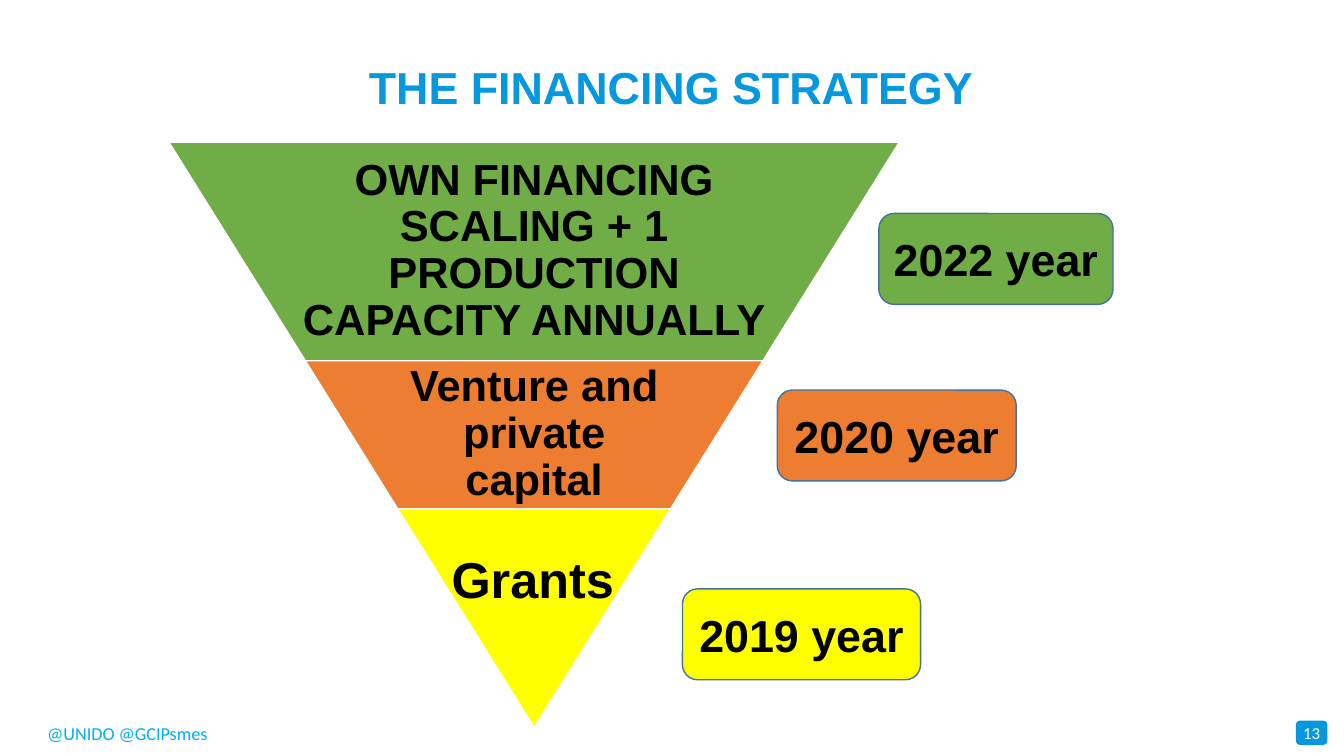
from dataclasses import dataclass

from pptx import Presentation
from pptx.dml.color import RGBColor
from pptx.enum.shapes import MSO_SHAPE as Preset
from pptx.enum.text import MSO_ANCHOR as Anchor, MSO_AUTO_SIZE as AutoSize, PP_ALIGN as Align
from pptx.shapes.autoshape import Shape
from pptx.slide import Slide
from pptx.util import Cm, Pt

BLUE, SKY, BORDER = "0698DF", "00B0F0", "43739E"
GREEN, ORANGE, YELLOW = "70AD47", "ED7D31", "FFFF00"
BLACK, WHITE = "000000", "FFFFFF"

PYRAMID_CENTER = 13.46
PYRAMID_TOP = 3.58
SIDE_SLOPE = 0.624
LABEL_SHARE = 0.65


@dataclass
class Box:
    left: float
    top: float
    width: float
    height: float


@dataclass
class TextStyle:
    size: float
    color: str = BLACK
    font: str = "Arial"
    bold: bool = True
    align: Align = Align.CENTER
    anchor: Anchor = Anchor.MIDDLE
    line_spacing: float = 1.0
    wrap: bool = True
    margins: tuple[float, float] = (0.25, 0.13)


@dataclass
class Tier:
    height: float
    color: str
    text: str = ""


@dataclass
class YearTag:
    text: str
    color: str
    box: Box


TIER_STYLE = TextStyle(31, line_spacing=0.9, margins=(0.1, 0.1))
TITLE_STYLE = TextStyle(32, BLUE, line_spacing=0.9)
GRANTS_STYLE = TextStyle(36, align=Align.LEFT, anchor=Anchor.TOP, wrap=False)
YEAR_STYLE = TextStyle(32)
FOOTER_STYLE = TextStyle(13, SKY, "Calibri", False, Align.LEFT, Anchor.TOP, wrap=False)
NUMBER_STYLE = TextStyle(12, WHITE, "Calibri", False, margins=(0, 0))

TIERS = [
    Tier(5.51, GREEN, "OWN FINANCING SCALING + 1 PRODUCTION CAPACITY ANNUALLY"),
    Tier(3.73, ORANGE, "Venture and private capital"),
    Tier(5.51, YELLOW),
]

YEAR_TAGS = [
    YearTag("2019 year", YELLOW, Box(17.2, 14.84, 6, 2.29)),
    YearTag("2020 year", ORANGE, Box(19.59, 9.83, 6.02, 2.29)),
    YearTag("2022 year", GREEN, Box(22.15, 5.38, 5.9, 2.29)),
]


def rgb(value: str) -> RGBColor:
    return RGBColor.from_string(value)


def lengths(box: Box) -> list[Cm]:
    return [Cm(value) for value in (box.left, box.top, box.width, box.height)]


def write_text(shape: Shape, text: str, style: TextStyle) -> None:
    frame = shape.text_frame
    frame.text = text
    frame.word_wrap = style.wrap
    frame.auto_size = AutoSize.NONE if style.wrap else AutoSize.SHAPE_TO_FIT_TEXT
    frame.vertical_anchor = style.anchor
    frame.margin_left = frame.margin_right = Cm(style.margins[0])
    frame.margin_top = frame.margin_bottom = Cm(style.margins[1])
    paragraph = frame.paragraphs[0]
    paragraph.alignment = style.align
    paragraph.line_spacing = style.line_spacing
    font = paragraph.runs[0].font
    font.name = style.font
    font.size = Pt(style.size)
    font.bold = style.bold
    font.color.rgb = rgb(style.color)


def add_text(slide: Slide, box: Box, text: str, style: TextStyle) -> None:
    write_text(slide.shapes.add_textbox(*lengths(box)), text, style)


def add_filled(slide: Slide, preset: Preset, box: Box, fill: str, line: str = "") -> Shape:
    shape = slide.shapes.add_shape(preset, *lengths(box))
    shape.shadow.inherit = False
    shape.fill.solid()
    shape.fill.fore_color.rgb = rgb(fill)
    if line:
        shape.line.color.rgb = rgb(line)
        shape.line.width = Pt(1)
    else:
        shape.line.fill.background()
    return shape


def add_pyramid(slide: Slide, tiers: list[Tier]) -> None:
    top = PYRAMID_TOP
    remaining = sum(tier.height for tier in tiers)
    for tier in tiers:
        width = 2 * SIDE_SLOPE * remaining
        box = Box(PYRAMID_CENTER - width / 2, top, width, tier.height)
        trapezoid = add_filled(slide, Preset.TRAPEZOID, box, tier.color, WHITE)
        trapezoid.adjustments[0] = SIDE_SLOPE
        trapezoid.rotation = 180
        if tier.text:
            label_width = width * LABEL_SHARE
            label = Box(PYRAMID_CENTER - label_width / 2, top, label_width, tier.height)
            add_text(slide, label, tier.text, TIER_STYLE)
        top += tier.height
        remaining -= tier.height


def add_year_tag(slide: Slide, tag: YearTag) -> None:
    shape = add_filled(slide, Preset.ROUNDED_RECTANGLE, tag.box, tag.color, BORDER)
    write_text(shape, tag.text, YEAR_STYLE)


def main() -> None:
    presentation = Presentation()
    presentation.slide_width = Cm(33.87)
    presentation.slide_height = Cm(19.05)
    slide = presentation.slides.add_slide(presentation.slide_layouts[6])

    add_text(slide, Box(0.94, 18.06, 4.6, 0.81), "@UNIDO @GCIPsmes", FOOTER_STYLE)
    badge = add_filled(slide, Preset.ROUNDED_RECTANGLE, Box(32.66, 18.16, 0.79, 0.61), BLUE)
    write_text(badge, "13", NUMBER_STYLE)
    add_text(slide, Box(5.97, 1.02, 21.89, 2.51), "THE FINANCING STRATEGY", TITLE_STYLE)

    add_pyramid(slide, TIERS)
    add_text(slide, Box(11.13, 13.69, 4.65, 1.8), "Grants", GRANTS_STYLE)
    for tag in YEAR_TAGS:
        add_year_tag(slide, tag)

    presentation.save("out.pptx")


if __name__ == "__main__":
    main()
